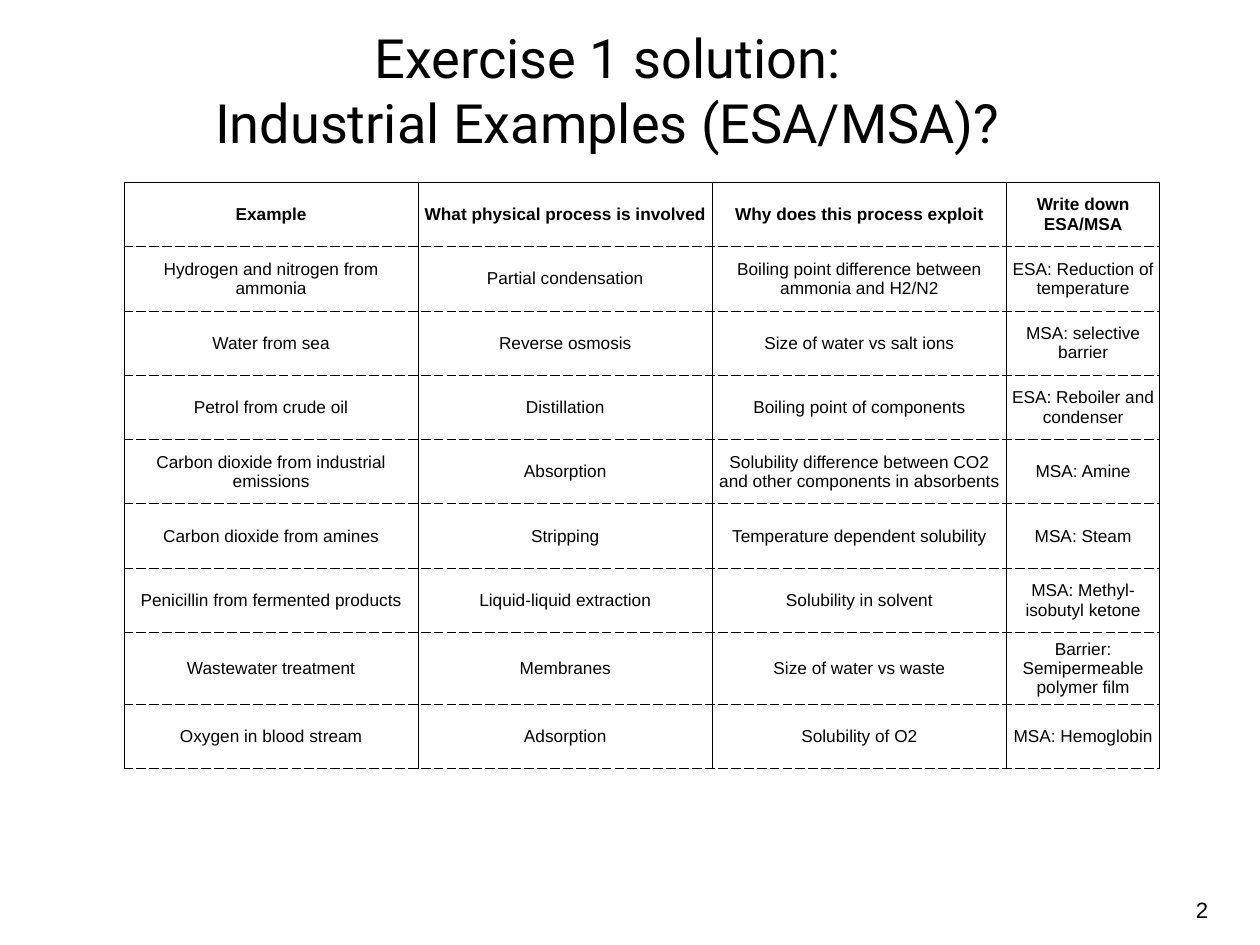
import pptx
import pptx.util
import pptx.dml.color
import pptx.enum.text
import pptx.oxml

Inch = pptx.util.Inches
Align = pptx.enum.text.PP_ALIGN
Anchor = pptx.enum.text.MSO_ANCHOR
WIDE, HIGH = 14.22, 10.67
INSET = Inch(0.06)
INK = "000000"


def write(frame, text, size=14, font="Arial", bold=False, color=INK):
    """Fill a text frame with one centred paragraph per line of text."""
    frame.word_wrap = True
    frame.text = text
    for para in frame.paragraphs:
        para.alignment = Align.CENTER
        para.font.size = pptx.util.Pt(size)
        para.font.name = font
        para.font.bold = bold
        para.font.color.rgb = pptx.dml.color.RGBColor.from_string(color)


def rule(cell, sides):
    """Draw cell borders from (side, dash) pairs in the order L, R, T, B."""
    props = cell._tc.get_or_add_tcPr()
    for spot, (side, dash) in enumerate(sides):
        props.insert(spot, pptx.oxml.parse_xml(
            f'<a:ln{side} xmlns:a="http://schemas.openxmlformats.org/drawingml/2006/main" w="12700">'
            f'<a:solidFill><a:srgbClr val="{INK}"/></a:solidFill>'
            f'<a:prstDash val="{dash}"/></a:ln{side}>'))


deck = pptx.Presentation()
deck.slide_width, deck.slide_height = Inch(WIDE), Inch(HIGH)
slide = deck.slides.add_slide(deck.slide_layouts[5])

# Title
title = slide.shapes.title
title.left, title.top = Inch(0.16 * WIDE), Inch(0.02 * HIGH)
title.width, title.height = Inch(0.645 * WIDE), Inch(0.15 * HIGH)
write(title.text_frame, "Exercise 1 solution:\nIndustrial Examples (ESA/MSA)?",
      size=44, font="Roboto")
title.text_frame.vertical_anchor = Anchor.MIDDLE
title.text_frame.margin_left = title.text_frame.margin_right = INSET

# Table of separation processes
rows = [
    ("Example", "What physical process is involved",
     "Why does this process exploit", "Write down ESA/MSA"),
    ("Hydrogen and nitrogen from ammonia", "Partial condensation",
     "Boiling point difference between ammonia and H2/N2", "ESA: Reduction of temperature"),
    ("Water from sea", "Reverse osmosis",
     "Size of water vs salt ions", "MSA: selective barrier"),
    ("Petrol from crude oil", "Distillation",
     "Boiling point of components", "ESA: Reboiler and condenser"),
    ("Carbon dioxide from industrial emissions", "Absorption",
     "Solubility difference between CO2 and other components in absorbents", "MSA: Amine"),
    ("Carbon dioxide from amines", "Stripping",
     "Temperature dependent solubility", "MSA: Steam"),
    ("Penicillin from fermented products", "Liquid-liquid extraction",
     "Solubility in solvent", "MSA: Methyl-isobutyl ketone"),
    ("Wastewater treatment", "Membranes",
     "Size of water vs waste", "Barrier: Semipermeable polymer film"),
    ("Oxygen in blood stream", "Adsorption",
     "Solubility of O2", "MSA: Hemoglobin"),
]
cols = [3.32, 3.32, 3.32, 1.73]
tall, total = 0.81, 6.62
step = (total - tall) / (len(rows) - 1)

table = slide.shapes.add_table(len(rows), len(cols), Inch(1.4), Inch(2.06),
                               Inch(sum(cols)), Inch(total)).table
table.first_row = table.horz_banding = False
for col, width in zip(table.columns, cols):
    col.width = Inch(width)
for r, row in enumerate(rows):
    table.rows[r].height = Inch(tall if row[0] == "Wastewater treatment" else step)
    for c, text in enumerate(row):
        cell = table.cell(r, c)
        write(cell.text_frame, text, bold=r == 0)
        cell.vertical_anchor = Anchor.MIDDLE
        cell.margin_left = cell.margin_right = INSET
        cell.margin_top = cell.margin_bottom = INSET
        cell.fill.background()
        top = "lgDash" if r else "solid"
        rule(cell, [("L", "solid"), ("R", "solid"), ("T", top), ("B", "lgDash")])

# Page number
page = slide.shapes.add_textbox(Inch(0.94 * WIDE), Inch(10.06), Inch(0.4), Inch(0.42))
write(page.text_frame, "2", size=18)
page.text_frame.margin_left = page.text_frame.margin_right = INSET
page.text_frame.margin_top = page.text_frame.margin_bottom = INSET

deck.save("out.pptx")
